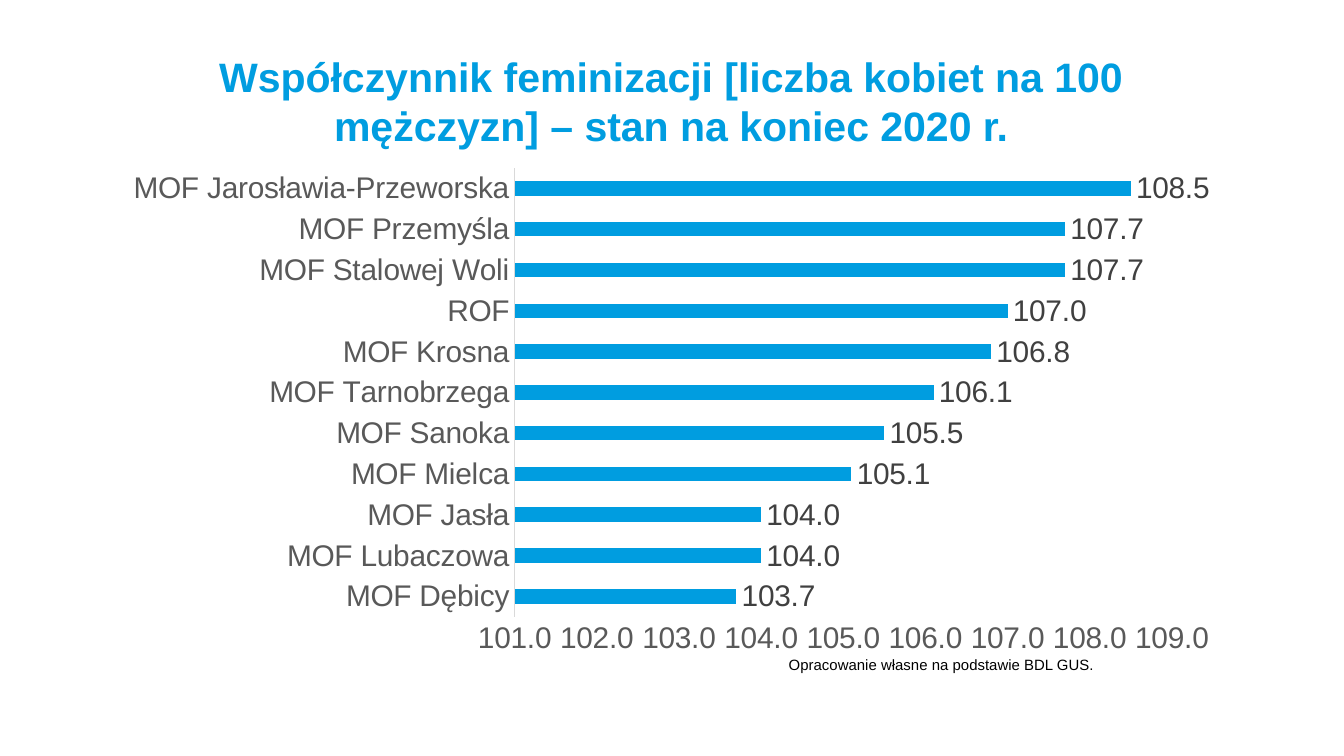
import pptx
import pptx.chart.data
import pptx.dml.color
import pptx.enum.chart
import pptx.enum.text
import pptx.oxml
import pptx.oxml.ns
import pptx.util

Inches = pptx.util.Inches
Pt = pptx.util.Pt

COLOURS = {
    "accent": "009DE0",
    "axis_text": "595959",
    "label_text": "404040",
    "axis_line": "D9D9D9",
    "black": "000000",
}

FEMINIZATION = {
    "MOF Dębicy": 103.7,
    "MOF Lubaczowa": 104.0,
    "MOF Jasła": 104.0,
    "MOF Mielca": 105.1,
    "MOF Sanoka": 105.5,
    "MOF Tarnobrzega": 106.1,
    "MOF Krosna": 106.8,
    "ROF": 107.0,
    "MOF Stalowej Woli": 107.7,
    "MOF Przemyśla": 107.7,
    "MOF Jarosławia-Przeworska": 108.5,
}


class SlideBuilder:
    """Holds the style and the current slide."""

    font_name = "Arial"
    chart_size = 16

    def __init__(self, slide):
        self.slide = slide

    def colour(self, name):
        return pptx.dml.color.RGBColor.from_string(COLOURS[name])

    def style_font(self, font, size, colour, bold=False):
        font.name = self.font_name
        font.size = Pt(size)
        font.bold = bold
        font.color.rgb = self.colour(colour)

    def add_text(self, text, bounds, size, colour, bold=False, align=None,
                 margin=None, line_spacing=None):
        box = self.slide.shapes.add_textbox(*map(Inches, bounds))
        frame = box.text_frame
        frame.word_wrap = True
        if margin is not None:
            frame.margin_left = frame.margin_right = Inches(margin)
            frame.margin_top = frame.margin_bottom = Inches(margin)
        frame.text = text
        para = frame.paragraphs[0]
        para.alignment = align
        if line_spacing:
            para.line_spacing = Pt(line_spacing)
        for span in para.runs:
            self.style_font(span.font, size, colour, bold)

    def add_bar_chart(self, values, bounds, plot_bounds, scale):
        """Draw the bars; plot_bounds are inches from the chart's corner."""
        data = pptx.chart.data.CategoryChartData(number_format="0.0")
        data.categories = list(values)
        data.add_series("Series 1", list(values.values()))
        frame = self.slide.shapes.add_chart(
            pptx.enum.chart.XL_CHART_TYPE.BAR_CLUSTERED,
            *map(Inches, bounds), data)
        chart = frame.chart
        chart.has_legend = False
        chart.has_title = False
        self.style_font(chart.font, self.chart_size, "black")
        self.style_plot(chart.plots[0])
        self.style_axes(chart, scale)
        chart_size = bounds[2:] * 2
        self.place_plot(chart, [part / whole for part, whole in zip(plot_bounds, chart_size)])

    def style_plot(self, plot):
        plot.gap_width = 182
        plot.vary_by_categories = False
        fill = plot.series[0].format.fill
        fill.solid()
        fill.fore_color.rgb = self.colour("accent")
        plot.has_data_labels = True
        labels = plot.data_labels
        labels.show_value = True
        labels.position = pptx.enum.chart.XL_LABEL_POSITION.OUTSIDE_END
        labels.number_format = "0.0"
        labels.number_format_is_linked = False
        self.style_font(labels.font, self.chart_size, "label_text")

    def style_axes(self, chart, scale):
        for axis in (chart.category_axis, chart.value_axis):
            axis.has_major_gridlines = False
            axis.major_tick_mark = pptx.enum.chart.XL_TICK_MARK.NONE
            axis.minor_tick_mark = pptx.enum.chart.XL_TICK_MARK.NONE
            self.style_font(axis.tick_labels.font, self.chart_size, "axis_text")
        line = chart.category_axis.format.line
        line.color.rgb = self.colour("axis_line")
        line.width = Pt(0.75)
        value_axis = chart.value_axis
        value_axis.format.line.fill.background()
        value_axis.minimum_scale, value_axis.maximum_scale = scale
        value_axis.major_unit = 1
        value_axis.tick_labels.number_format = "0.0"
        value_axis.tick_labels.number_format_is_linked = False

    def place_plot(self, chart, fractions):
        """Fix the inner plot area, given as fractions of the chart."""
        plot_area = chart._chartSpace.chart.plotArea
        for layout in plot_area.findall(pptx.oxml.ns.qn("c:layout")):
            plot_area.remove(layout)
        settings = [("layoutTarget", "inner"), ("xMode", "edge"), ("yMode", "edge")]
        settings += zip("xywh", fractions)
        children = "".join(f'<c:{tag} val="{value}"/>' for tag, value in settings)
        plot_area.insert(0, pptx.oxml.parse_xml(
            f'<c:layout {pptx.oxml.ns.nsdecls("c")}>'
            f"<c:manualLayout>{children}</c:manualLayout></c:layout>"))


def main():
    deck = pptx.Presentation()
    deck.slide_width = Inches(10)
    deck.slide_height = deck.slide_width * 9 // 16
    builder = SlideBuilder(deck.slides.add_slide(deck.slide_layouts[6]))

    builder.add_text(
        "Współczynnik feminizacji [liczba kobiet na 100 mężczyzn] – stan na koniec 2020 r.",
        (0.83, 0.39, 8.33, 0.89), 22, "accent", bold=True,
        align=pptx.enum.text.PP_ALIGN.CENTER, margin=0, line_spacing=26)
    builder.add_bar_chart(
        FEMINIZATION, (0.83, 1.17, 8.33, 3.78),
        plot_bounds=(3, 0.08, 4.89, 3.34), scale=(101, 109))
    builder.add_text("Opracowanie własne na podstawie BDL GUS.",
                     (5.77, 4.83, 3.54, 0.24), 8, "black")
    deck.save("out.pptx")


if __name__ == "__main__":
    main()
